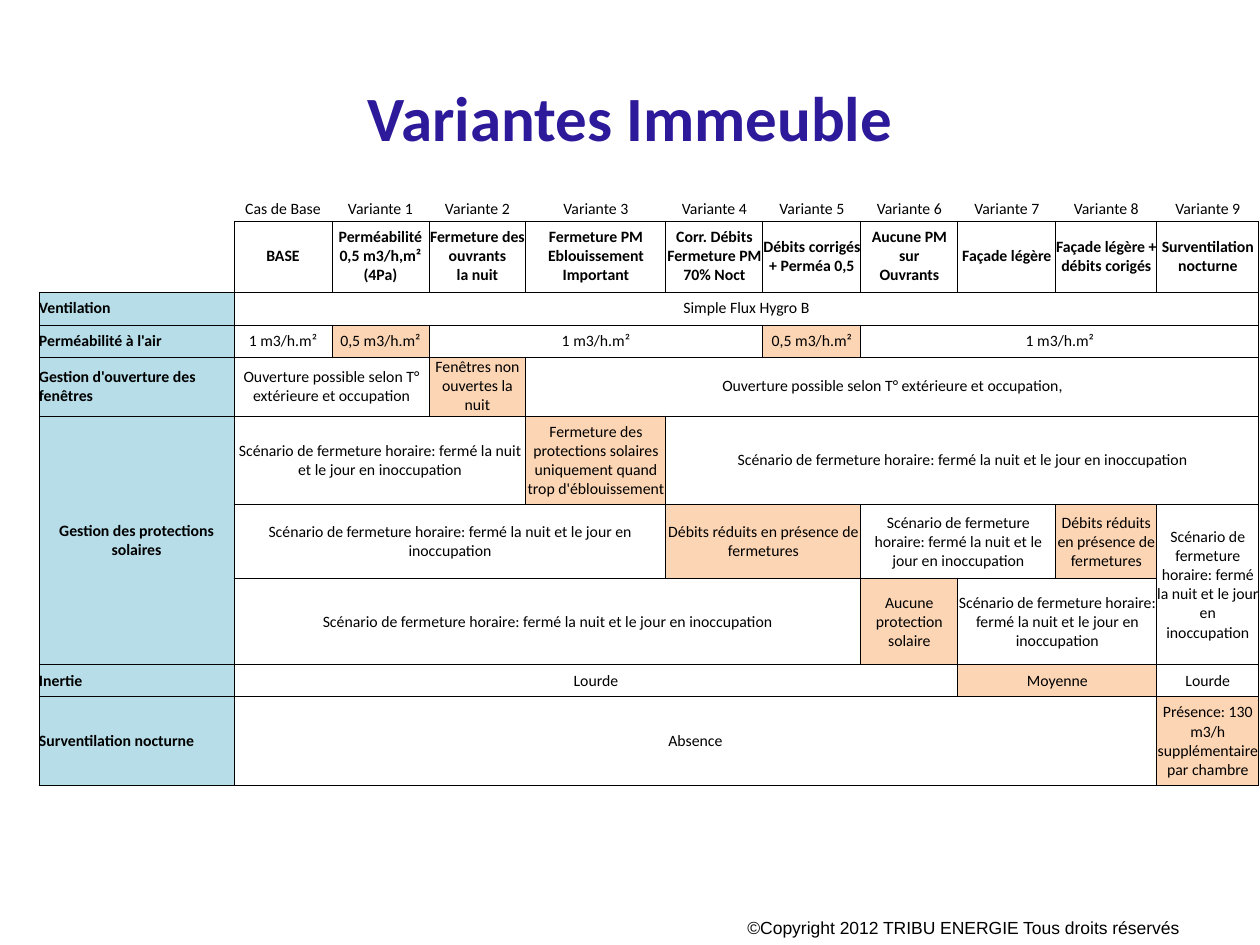
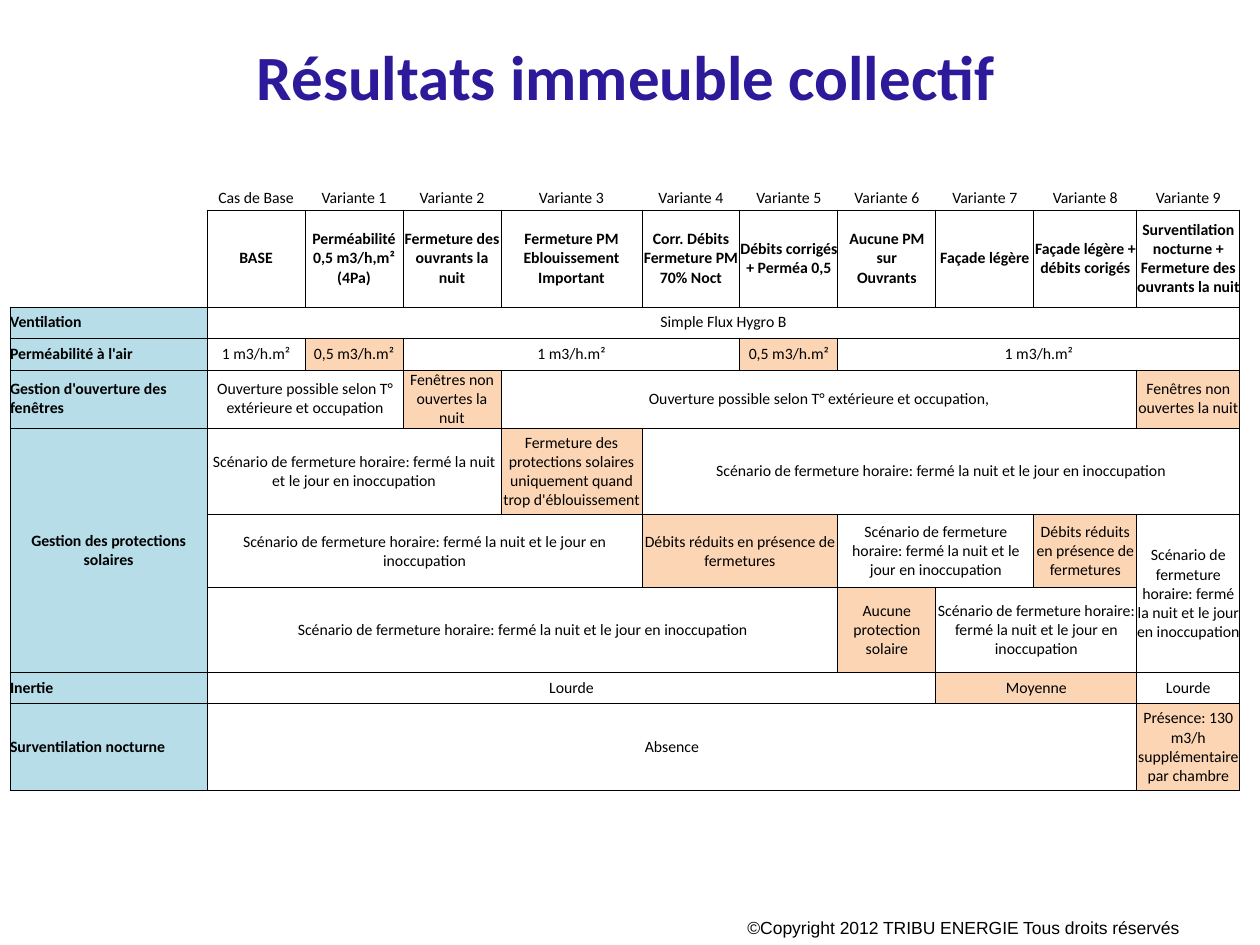
from typing import NamedTuple

from lxml.etree import SubElement
from pptx import Presentation
from pptx.dml.color import RGBColor
from pptx.enum.text import MSO_ANCHOR as Anchor, MSO_AUTO_SIZE as AutoSize, PP_ALIGN as Align
from pptx.oxml.ns import qn
from pptx.util import Pt

PX = 914400 / 126
COLOURS = {"text": "000000", "title": "2C1A9A", "label": "B6DDE8", "change": "FCD5B4"}
CELL_SIZE = 9
BORDER_WIDTH = Pt(0.5)


class Block(NamedTuple):
    text: str
    columns: int = 1
    rows: int = 1
    fill: str = ""


def px(*lengths):
    return [round(length * PX) for length in lengths]


def write(frame, text, size=CELL_SIZE, font="Calibri", colour="text", bold=False, align=Align.CENTER):
    paragraph = frame.paragraphs[0]
    paragraph.text = text
    paragraph.alignment = align
    for run in paragraph.runs:
        run.font.size = Pt(size)
        run.font.name = font
        run.font.bold = bold
        run.font.color.rgb = RGBColor.from_string(COLOURS[colour])
    for line_break in paragraph._p.findall(qn("a:br")):
        SubElement(line_break, qn("a:rPr"), sz=str(size * 100))


# Wording shared by both tables; None is a cell covered from above or left empty
CLOSING = "Scénario de fermeture horaire: fermé la nuit et le jour en inoccupation"
OPENING = "Ouverture possible selon T° extérieure et occupation"
REDUCED = "Débits réduits en présence de fermetures"
NIGHT_SHUT = Block("Fenêtres non ouvertes la nuit", fill="change")
LEAKY = "1 m3/h.m²"
TIGHT = Block("0,5 m3/h.m²", fill="change")

case_row = [None, Block("Cas de Base")] + [Block(f"Variante {number}") for number in range(1, 10)]
window_start = [
    Block("Gestion d'ouverture des fenêtres", fill="label"),
    Block(OPENING, 2),
    NIGHT_SHUT,
]
rows_above = [
    [Block("Ventilation", fill="label"), Block("Simple Flux Hygro B", 10)],
    [Block("Perméabilité à l'air", fill="label"), Block(LEAKY), TIGHT, Block(LEAKY, 3),
     TIGHT, Block(LEAKY, 4)],
]
rows_below = [
    [Block("Gestion des protections solaires", rows=3, fill="label"), Block(CLOSING, 3),
     Block("Fermeture des protections solaires uniquement quand trop d'éblouissement", fill="change"),
     Block(CLOSING, 6)],
    [None, Block(CLOSING, 4), Block(REDUCED, 2, fill="change"), Block(CLOSING, 2),
     Block(REDUCED, fill="change"), Block(CLOSING, rows=2)],
    [None, Block(CLOSING, 6), Block("Aucune protection solaire", fill="change"), Block(CLOSING, 2)],
    [Block("Inertie", fill="label"), Block("Lourde", 7), Block("Moyenne", 2, fill="change"),
     Block("Lourde")],
    [Block("Surventilation nocturne", fill="label"), Block("Absence", 9),
     Block("Présence: 130 m3/h supplémentaire par chambre", fill="change")],
]

# What differs from slide to slide
pages = [
    {
        "title": "Variantes Immeuble",
        "title_box": (63, 38, 1134, 157),
        "table_corner": (39, 197),
        "widths": [195, 98, 97, 97, 140, 97, 98, 97, 98, 101, 102],
        "heights": [24, 71, 33, 32, 59, 89, 74, 86, 32, 89],
        "night_header": "Fermeture des ouvrants\nla nuit",
        "last_header": "Surventilation nocturne",
        "window_end": [Block(OPENING + ",", 7)],
    },
    {
        "title": "Résultats immeuble collectif",
        "title_box": (59, 20, 1134, 110),
        "table_corner": (10, 186),
        "widths": [197, 98, 98, 98, 141, 98, 98, 98, 98, 103, 103],
        "heights": [24, 97, 31, 32, 58, 87, 73, 85, 31, 87],
        "night_header": "Fermeture des ouvrants la nuit",
        "last_header": "Surventilation nocturne + Fermeture des ouvrants la nuit",
        "window_end": [Block(OPENING + ",", 6), NIGHT_SHUT],
    },
]

presentation = Presentation()
presentation.slide_width, presentation.slide_height = px(1260, 945)

for page in pages:
    slide = presentation.slides.add_slide(presentation.slide_layouts[5])

    # Copyright footer
    footer = slide.shapes.add_textbox(*px(735, 911, 525, 34))
    footer.text_frame.word_wrap = True
    write(footer.text_frame, "©Copyright 2012 TRIBU ENERGIE Tous droits réservés",
          size=10, font="Arial", align=Align.LEFT)

    # Title
    title = slide.shapes.title
    title.left, title.top, title.width, title.height = px(*page["title_box"])
    title.text_frame.auto_size = AutoSize.NONE
    title.text_frame.vertical_anchor = Anchor.MIDDLE
    write(title.text_frame, page["title"], size=36, colour="title", bold=True)

    # Table contents
    headers = [
        "BASE", "Perméabilité\n0,5 m3/h,m²\n(4Pa)", page["night_header"],
        "Fermeture PM Eblouissement\nImportant", "Corr. Débits\nFermeture PM\n70% Noct",
        "Débits corrigés + Perméa 0,5", "Aucune PM\nsur\nOuvrants", "Façade légère",
        "Façade légère + débits corigés", page["last_header"],
    ]
    header_row = [None] + [Block(header) for header in headers]
    window_row = window_start + page["window_end"]
    grid = [case_row, header_row, *rows_above, window_row, *rows_below]

    # Table frame
    widths, heights = page["widths"], page["heights"]
    frame = slide.shapes.add_table(len(heights), len(widths),
                                   *px(*page["table_corner"], sum(widths), sum(heights)))
    table = frame.table
    table.first_row = table.horz_banding = False
    for column, width in zip(table.columns, px(*widths)):
        column.width = width
    for row, height in zip(table.rows, px(*heights)):
        row.height = height

    # Borders, margins and empty-line size of every cell
    for row_index in range(len(heights)):
        for column_index in range(len(widths)):
            cell = table.cell(row_index, column_index)
            cell.margin_left = cell.margin_right = cell.margin_top = cell.margin_bottom = 0
            cell.vertical_anchor = Anchor.MIDDLE
            sides = "LRTB"
            if row_index == 0:
                sides = "B" if column_index else ""
            elif row_index == 1 and column_index == 0:
                sides = "RB"
            properties = cell._tc.get_or_add_tcPr()
            for side in "LRTB":
                line = SubElement(properties, qn(f"a:ln{side}"), w=str(BORDER_WIDTH))
                if side in sides:
                    fill = SubElement(line, qn("a:solidFill"))
                    SubElement(fill, qn("a:srgbClr"), val=COLOURS["text"])
                else:
                    SubElement(line, qn("a:noFill"))
            cell.fill.background()
            SubElement(cell.text_frame.paragraphs[0]._p, qn("a:endParaRPr"), sz=str(CELL_SIZE * 100))

    # Merged blocks, their fill and text
    for row_index, blocks in enumerate(grid):
        column_index = 0
        for block in blocks:
            if block is None:
                column_index += 1
                continue
            cell = table.cell(row_index, column_index)
            if block.columns > 1 or block.rows > 1:
                cell.merge(table.cell(row_index + block.rows - 1, column_index + block.columns - 1))
            if block.fill:
                cell.fill.solid()
                cell.fill.fore_color.rgb = RGBColor.from_string(COLOURS[block.fill])
            is_label = block.fill == "label"
            write(cell.text_frame, block.text, bold=is_label or row_index == 1,
                  align=Align.LEFT if is_label and block.rows == 1 else Align.CENTER)
            column_index += block.columns

presentation.save("out.pptx")
